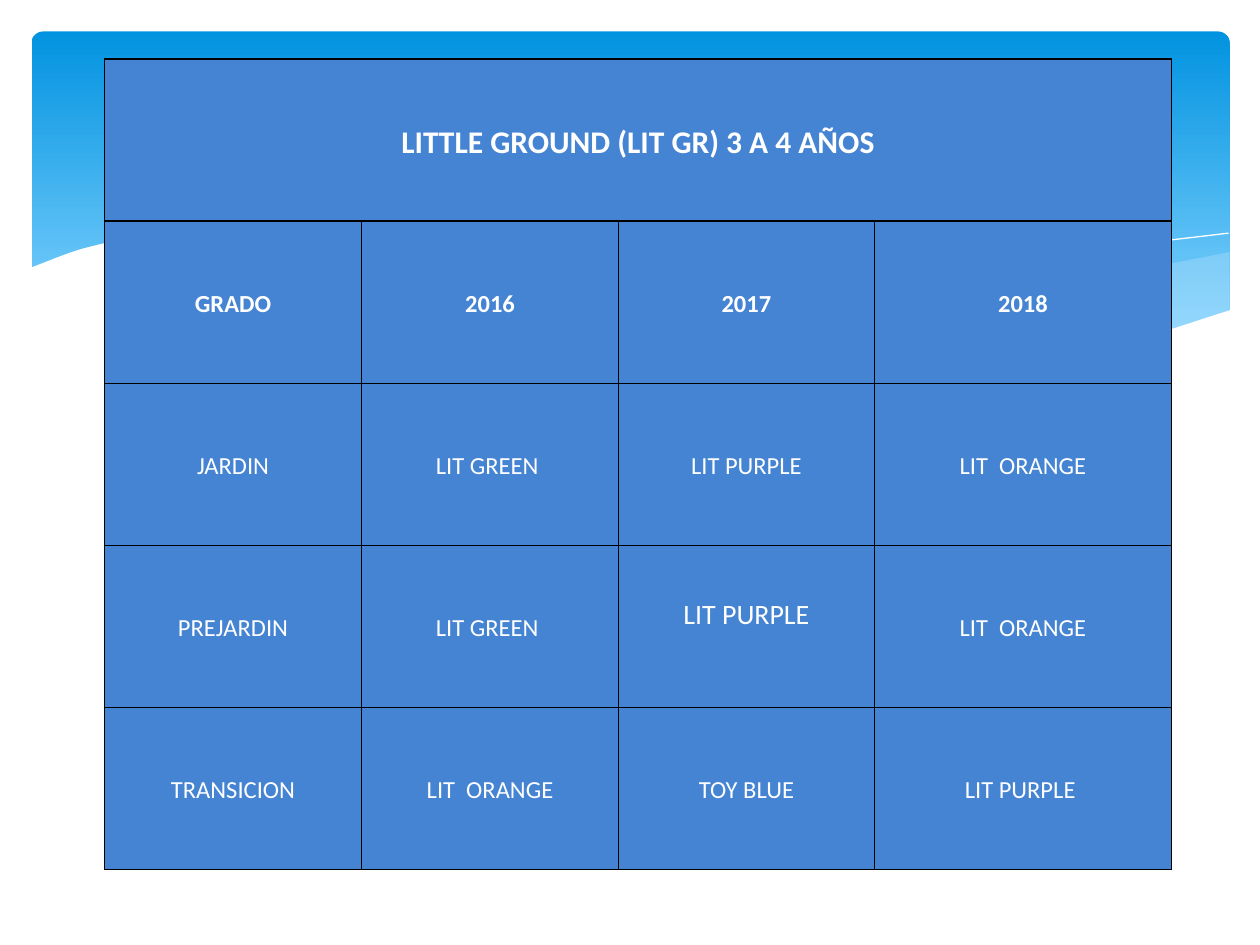
from dataclasses import dataclass
from lxml.etree import SubElement
from pptx import Presentation
from pptx.dml.color import RGBColor as RGB
from pptx.enum.shapes import MSO_SHAPE as SHAPE
from pptx.enum.text import MSO_ANCHOR as ANCHOR, PP_ALIGN as ALIGN
from pptx.oxml.ns import qn
from pptx.util import Inches, Pt


@dataclass(frozen=True)
class Theme:
    white: RGB = RGB(0xFF, 0xFF, 0xFF)
    sky: RGB = RGB(0x02, 0x93, 0xE0)
    pale: RGB = RGB(0x83, 0xD3, 0xFE)
    wave: RGB = RGB(0xC6, 0xE7, 0xFC)
    cell: RGB = RGB(0x45, 0x84, 0xD3)
    border: RGB = RGB(0x00, 0x00, 0x00)
    font: str = "Calibri"
    title: int = 18
    large: int = 16
    body: int = 14


theme = Theme()


def smooth_curve(knots, steps=8):
    last = len(knots) - 1
    slopes = []
    for i in range(last + 1):
        (x0, y0), (x1, y1) = knots[max(i - 1, 0)], knots[min(i + 1, last)]
        slopes.append((y1 - y0) / (x1 - x0))
    points = [knots[0]]
    for (x0, y0), (x1, y1), m0, m1 in zip(knots, knots[1:], slopes, slopes[1:]):
        width = x1 - x0
        for step in range(1, steps + 1):
            t = step / steps
            ease = t * t * (3 - 2 * t)
            bend = width * t * (1 - t) * (m0 * (1 - t) - m1 * t)
            points.append((x0 + width * t, y0 + (y1 - y0) * ease + bend))
    return points


def add_wave(s, points, closed):
    pts = [(Inches(x), Inches(y)) for x, y in points]
    builder = s.shapes.build_freeform(*pts[0], scale=1.0)
    builder.add_line_segments(pts[1:], close=closed)
    sp = builder.convert_to_shape()
    sp.shadow.inherit = False
    return sp


prs = Presentation()
prs.slide_width, prs.slide_height = Inches(10), Inches(7.5)
s = prs.slides.add_slide(prs.slide_layouts[6])

banner = s.shapes.add_shape(SHAPE.ROUNDED_RECTANGLE, Inches(0.25), Inches(0.25),
                            Inches(9.51), Inches(2.7))
banner.adjustments[0] = 0.034
banner.shadow.inherit = False
banner.line.fill.background()
banner.fill.gradient()
banner.fill.gradient_angle = 270
for stop, color, position in zip(banner.fill.gradient_stops,
                                 (theme.sky, theme.pale), (0, 0.9)):
    stop.color.rgb = color
    stop.position = position

right_top = [(6.61, 2.65), (7.53, 2.48), (8.61, 2.23), (9.76, 2)]
right_bottom = [(6.61, 2.65), (7.19, 2.72), (8.03, 2.78), (8.89, 2.72), (9.76, 2.47)]
center_top = [(2.86, 1.91), (3.61, 1.85), (4.42, 1.89), (5.41, 2.03), (6.68, 2.31),
              (8.93, 2.73)]
center_bottom = [(2.86, 1.91), (4.49, 2.22), (6.18, 2.58), (7.22, 2.74), (8.18, 2.78),
                 (8.93, 2.73)]
long_line = [(3.09, 1.95), (4.01, 1.87), (5.1, 1.92), (6.65, 2.13), (9.07, 2.72)]
right_line = [(6.13, 2.57), (7.48, 2.23), (8.66, 1.99), (9.75, 1.85)]
page_top = [(0.23, 2.13), (0.67, 1.97), (1.19, 1.87), (1.93, 1.84), (2.92, 1.9),
            (4.47, 2.2), (6.03, 2.54), (7.08, 2.7), (8.09, 2.77), (8.99, 2.69),
            (9.77, 2.46)]
page_bottom = [(0.23, 3.29), (9.77, 3.29)]

bands = [
    (right_top, right_bottom, theme.wave, 29),
    (center_top, center_bottom, theme.wave, 40),
    (page_top, page_bottom, theme.white, 100),
]
lines = [long_line, right_line]

for knots in lines:
    line = add_wave(s, smooth_curve(knots), closed=False)
    line.fill.background()
    line.line.color.rgb = theme.white
    line.line.width = Pt(0)

for top, bottom, color, opacity in bands:
    outline = smooth_curve(top) + smooth_curve(bottom)[::-1]
    band = add_wave(s, outline, closed=True)
    band.line.fill.background()
    band.fill.solid()
    band.fill.fore_color.rgb = color
    rgb = band.fill._xPr.find(qn("a:solidFill"))[0]
    SubElement(rgb, qn("a:alpha")).set("val", str(opacity * 1000))

rows = [
    ["LITTLE GROUND (LIT GR) 3 A 4 AÑOS", "", "", ""],
    ["GRADO", "2016", "2017", "2018"],
    ["JARDIN", "LIT GREEN ", "LIT PURPLE", "LIT  ORANGE"],
    ["PREJARDIN", "LIT GREEN ", "LIT PURPLE", "LIT  ORANGE"],
    ["TRANSICION", "LIT  ORANGE", "TOY BLUE", "LIT PURPLE "],
]
col_widths = [2.04, 2.04, 2.03, 2.36]
header_rows = 2
raised_cell = (3, 2)

table = s.shapes.add_table(len(rows), len(col_widths), Inches(0.83), Inches(0.47),
                           Inches(sum(col_widths)), Inches(6.43)).table
table.first_row = False
table.horz_banding = False
for col, width in zip(table.columns, col_widths):
    col.width = Inches(width)
table.cell(0, 0).merge(table.cell(0, len(col_widths) - 1))

for i, row in enumerate(rows):
    for j, text in enumerate(row):
        cell = table.cell(i, j)
        tc_pr = cell._tc.get_or_add_tcPr()
        for side in ("a:lnL", "a:lnR", "a:lnT", "a:lnB"):
            border = SubElement(tc_pr, qn(side), w=str(Pt(1)))
            border_fill = SubElement(border, qn("a:solidFill"))
            SubElement(border_fill, qn("a:srgbClr"), val=str(theme.border))
        cell.fill.solid()
        cell.fill.fore_color.rgb = theme.cell
        cell.vertical_anchor = ANCHOR.MIDDLE
        cell.margin_left = cell.margin_right = Inches(0.07)
        cell.margin_top = cell.margin_bottom = 0
        if not text:
            continue
        p = cell.text_frame.paragraphs[0]
        p.alignment = ALIGN.CENTER
        p.line_spacing = 1.15
        r = p.add_run()
        r.text = text
        r.font.name = theme.font
        r.font.size = Pt(theme.title if i == 0 else theme.body)
        r.font.bold = i < header_rows
        r.font.color.rgb = theme.white
        if (i, j) == raised_cell:
            r.font.size = Pt(theme.large)
            cell.margin_bottom = Inches(0.22)

prs.save("out.pptx")
